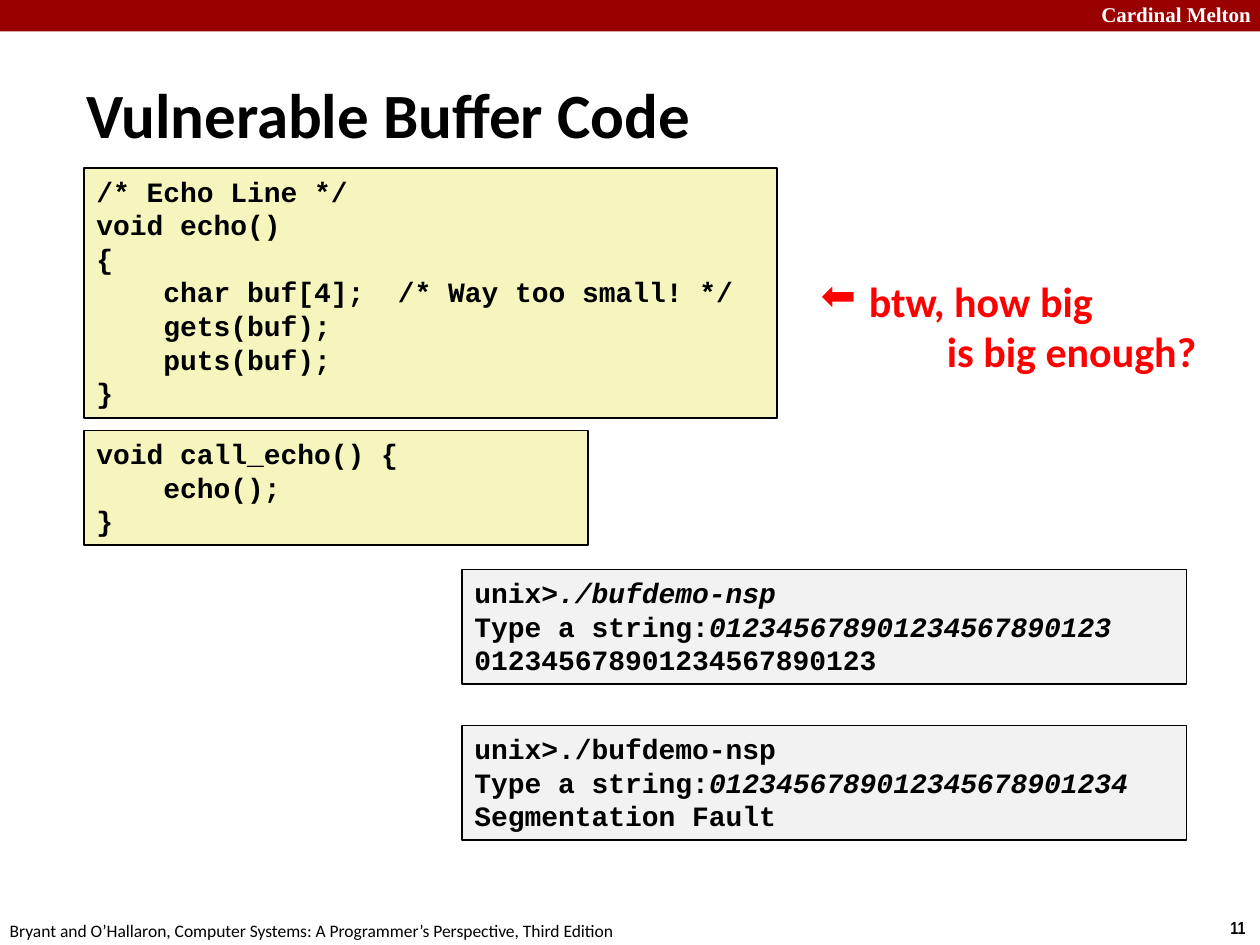
from dataclasses import dataclass

import pptx
import pptx.dml.color
import pptx.enum.shapes
import pptx.enum.text
import pptx.oxml
import pptx.oxml.ns
import pptx.util

WIDTH = pptx.util.Inches(10)
HEIGHT = pptx.util.Inches(7.5)
COLUMNS, ROWS = 120, 90
ANCHOR = pptx.enum.text.MSO_ANCHOR


@dataclass(frozen=True)
class Theme:
    ink: str = "000000"
    paper: str = "FFFFFF"
    banner: str = "990000"
    source_fill: str = "F6F5BD"
    terminal_fill: str = "F2F2F2"
    remark: str = "FF0000"
    body_font: str = "Calibri"
    code_font: str = "Courier New"
    banner_font: str = "Times New Roman"
    number_font: str = "Arial Narrow"
    title_size: int = 36
    remark_size: int = 24
    code_size: int = 16
    banner_size: int = 12
    footer_size: int = 10


@dataclass(frozen=True)
class Area:
    """A place on the grid, in columns and rows."""
    column: float
    row: float
    columns: float
    rows: float

    def lengths(self) -> tuple:
        across, down = WIDTH / COLUMNS, HEIGHT / ROWS
        return (round(self.column * across), round(self.row * down),
                round(self.columns * across), round(self.rows * down))


@dataclass(frozen=True)
class Typed:
    """Words entered by the user, set in italics."""
    text: str


@dataclass(frozen=True)
class CodePanel:
    area: Area
    fill: str
    lines: tuple


THEME = Theme()

PANELS = (
    CodePanel(Area(8, 41, 48, 10.9), THEME.source_fill, (
        ("void call_echo() {",),
        ("    echo();",),
        ("}",))),
    CodePanel(Area(8, 16, 66, 23.8), THEME.source_fill, (
        ("/* Echo Line */",),
        ("void echo()",),
        ("{",),
        ("    char buf[4];  /* Way too small! */",),
        ("    gets(buf);",),
        ("    puts(buf);",),
        ("}",))),
    CodePanel(Area(44, 54.25, 69, 10.9), THEME.terminal_fill, (
        ("unix>", Typed("./bufdemo-nsp")),
        ("Type a string:", Typed("012345678901234567890123")),
        ("012345678901234567890123",))),
    CodePanel(Area(44, 69.1, 69, 10.9), THEME.terminal_fill, (
        ("unix>./bufdemo-nsp",),
        ("Type a string:", Typed("0123456789012345678901234")),
        ("Segmentation Fault",))),
)


def rgb(value: str) -> pptx.dml.color.RGBColor:
    return pptx.dml.color.RGBColor.from_string(value)


def write(shape, lines: tuple, *, font: str = THEME.body_font, size: int,
          color: str = THEME.ink, bold: bool = True, wrap: bool = True,
          anchor=ANCHOR.TOP) -> list:
    """Fill a shape with lines of text pieces; return its paragraphs."""
    frame = shape.text_frame
    frame.auto_size = pptx.enum.text.MSO_AUTO_SIZE.NONE
    frame.word_wrap = wrap
    frame.vertical_anchor = anchor
    for index, pieces in enumerate(lines):
        paragraph = frame.add_paragraph() if index else frame.paragraphs[0]
        paragraph.alignment = pptx.enum.text.PP_ALIGN.LEFT
        for piece in pieces:
            typed = isinstance(piece, Typed)
            run = paragraph.add_run()
            run.text = piece.text if typed else piece
            run.font.name = font
            run.font.size = pptx.util.Pt(size)
            run.font.bold = bold
            run.font.italic = typed
            run.font.color.rgb = rgb(color)
    return list(frame.paragraphs)


def add_rectangle(slide, area: Area, fill: str, outlined: bool = False):
    shape = slide.shapes.add_shape(
        pptx.enum.shapes.MSO_SHAPE.RECTANGLE, *area.lengths())
    shape.shadow.inherit = False
    shape.fill.solid()
    shape.fill.fore_color.rgb = rgb(fill)
    if outlined:
        shape.line.color.rgb = rgb(THEME.ink)
        shape.line.width = pptx.util.Pt(1)
    else:
        shape.line.fill.background()
    return shape


def add_label(slide, area: Area, lines: tuple, **text_format) -> list:
    return write(slide.shapes.add_textbox(*area.lengths()), lines, **text_format)


def add_panel(slide, panel: CodePanel) -> None:
    shape = add_rectangle(slide, panel.area, panel.fill, outlined=True)
    write(shape, panel.lines, font=THEME.code_font, size=THEME.code_size)


def indent(paragraph, margin: float, first_line: float = 0) -> None:
    """Set the left margin and first-line offset, in inches."""
    properties = paragraph._p.get_or_add_pPr()
    properties.set("marL", str(pptx.util.Inches(margin)))
    properties.set("indent", str(pptx.util.Inches(first_line)))


def add_bullet(paragraph, character: str) -> None:
    bullet = pptx.oxml.parse_xml(
        f'<a:buChar {pptx.oxml.ns.nsdecls("a")} char="{character}"/>')
    paragraph._p.get_or_add_pPr().append(bullet)


def add_frame(slide) -> None:
    """Draw the banner and the footer."""
    add_rectangle(slide, Area(0, 0, COLUMNS, 3), THEME.banner)
    add_label(slide, Area(103.7, -0.4, 17.2, 3.6), (("Cardinal Melton",),),
              font=THEME.banner_font, size=THEME.banner_size, color=THEME.paper)
    add_label(slide, Area(116, 86.75, 4, 3.25), (("11",),),
              font=THEME.number_font, size=THEME.footer_size, wrap=False)
    credit = ("Bryant and O’Hallaron, Computer Systems: "
              "A Programmer’s Perspective, Third Edition")
    add_label(slide, Area(-0.25, 87, 61, 3.25), ((credit,),),
              size=THEME.footer_size, bold=False, wrap=False)


def add_title(slide) -> None:
    title = slide.shapes.title
    title.left, title.top, title.width, title.height = Area(7, 7, 84, 7.5).lengths()
    paragraphs = write(title, (("Vulnerable Buffer Code",),),
                       size=THEME.title_size, anchor=ANCHOR.MIDDLE)
    indent(paragraphs[0], 0.13, -0.13)


def add_remark(slide) -> None:
    question, ending = add_label(
        slide, Area(77, 25.6, 38.5, 10.9),
        (("btw, how big",), ("is big enough?",)),
        size=THEME.remark_size, color=THEME.remark, wrap=False)
    indent(question, 0.38, -0.38)
    add_bullet(question, "⬅")
    indent(ending, 1)


def main() -> None:
    presentation = pptx.Presentation()
    presentation.slide_width, presentation.slide_height = WIDTH, HEIGHT
    title_only = presentation.slide_layouts[5]
    slide = presentation.slides.add_slide(title_only)
    add_frame(slide)
    add_title(slide)
    for panel in PANELS:
        add_panel(slide, panel)
    add_remark(slide)
    presentation.save("out.pptx")


if __name__ == "__main__":
    main()
